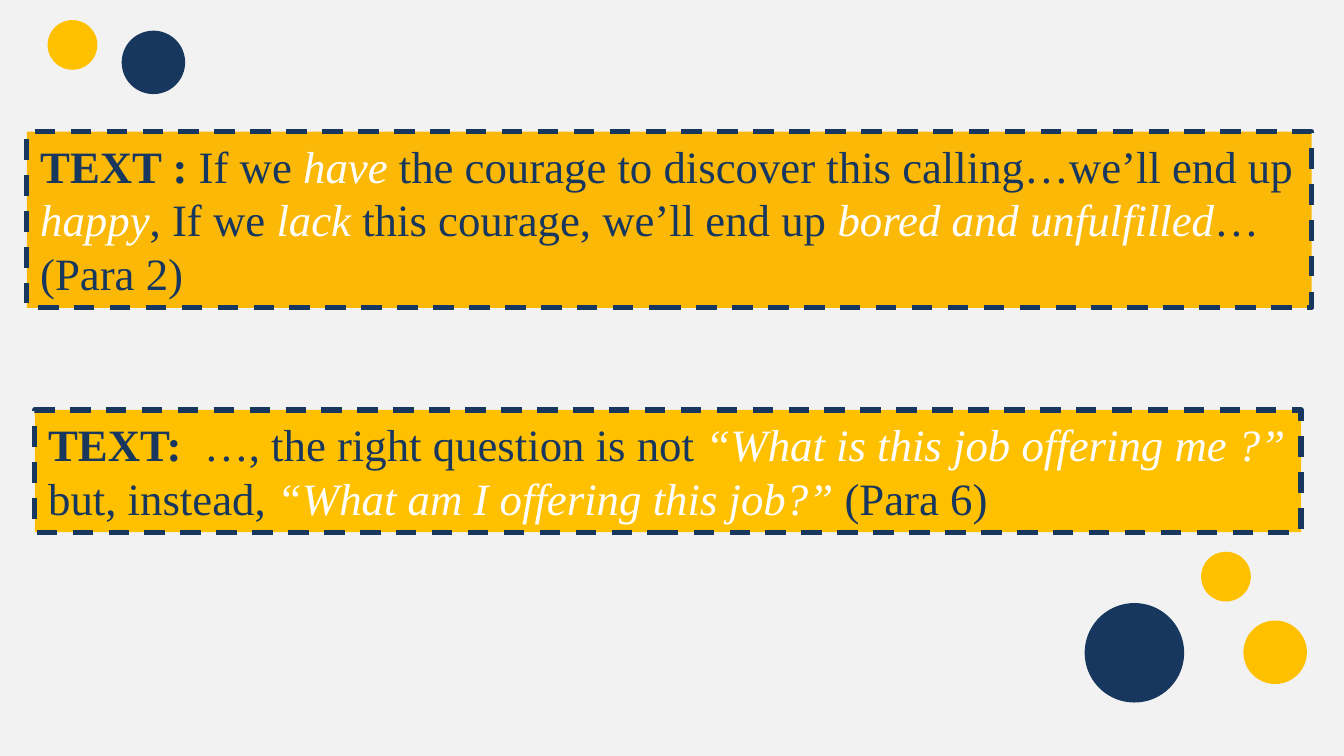
"""Build a slide with two quoted passages and decorative dots."""
from typing import NamedTuple

import pptx
import pptx.dml.color
import pptx.enum.dml
import pptx.enum.shapes
import pptx.enum.text
import pptx.slide
import pptx.util

NAVY = pptx.dml.color.RGBColor(0x17, 0x37, 0x5E)
GOLD = pptx.dml.color.RGBColor(0xFF, 0xC0, 0x00)
AMBER = pptx.dml.color.RGBColor(0xFC, 0xB8, 0x06)
WHITE = pptx.dml.color.RGBColor(0xFF, 0xFF, 0xFF)
PALE_GREY = pptx.dml.color.RGBColor(0xF2, 0xF2, 0xF2)

BASE_FONT = {"name": "Times New Roman", "size": pptx.util.Pt(24)}
LABEL = {"bold": True, "italic": False}
PLAIN = {"bold": False, "italic": False}
QUOTED = {"bold": False, "italic": True}
BORDER = {
    "width": pptx.util.Pt(2.75),
    "dash_style": pptx.enum.dml.MSO_LINE_DASH_STYLE.DASH,
}
FRAME = {
    "word_wrap": True,
    "auto_size": pptx.enum.text.MSO_AUTO_SIZE.SHAPE_TO_FIT_TEXT,
}


class Passage(NamedTuple):
    left: float
    top: float
    width: float
    height: float
    color: pptx.dml.color.RGBColor
    phrases: list[tuple[str, dict]]


class Dot(NamedTuple):
    left: float
    top: float
    diameter: float
    color: pptx.dml.color.RGBColor


PASSAGES = [
    Passage(0.66, 7.75, 23.93, 2.31, GOLD, [
        ("TEXT: ", LABEL),
        (" …, the right question is not ", PLAIN),
        ("“What is this job offering me ?” ", QUOTED),
        ("but, instead, ", PLAIN),
        ("“What am I offering this job?” ", QUOTED),
        ("(Para 6)", PLAIN),
    ]),
    Passage(0.51, 2.49, 24.28, 3.33, AMBER, [
        ("TEXT : ", LABEL),
        ("If we ", PLAIN),
        ("have", QUOTED),
        (" the courage to discover this calling…we’ll end up ", PLAIN),
        ("happy", QUOTED),
        (", If we ", PLAIN),
        ("lack", QUOTED),
        (" this courage, we’ll end up ", PLAIN),
        ("bored and unfulfilled", QUOTED),
        ("… (Para 2)", PLAIN),
    ]),
]

SMALL, MEDIUM, LARGE = 0.94, 1.2, 1.88
DOTS = [
    Dot(23.5, 11.73, MEDIUM, GOLD),
    Dot(20.5, 11.4, LARGE, NAVY),
    Dot(22.7, 10.43, SMALL, GOLD),
    Dot(0.9, 0.38, SMALL, GOLD),
    Dot(2.3, 0.58, MEDIUM, NAVY),
]


def apply_format(target: object, values: dict) -> None:
    """Set every named format value on the target."""
    for attribute, value in values.items():
        setattr(target, attribute, value)


def draw_passage(slide: pptx.slide.Slide, passage: Passage) -> None:
    """Draw a dashed box holding one passage of mixed emphasis."""
    box = slide.shapes.add_textbox(*map(pptx.util.Cm, passage[:4]))
    box.fill.solid()
    box.fill.fore_color.rgb = passage.color
    box.line.color.rgb = NAVY
    apply_format(box.line, BORDER)
    apply_format(box.text_frame, FRAME)
    paragraph = box.text_frame.paragraphs[0]
    for words, emphasis in passage.phrases:
        phrase = paragraph.add_run()
        phrase.text = words
        apply_format(phrase.font, BASE_FONT | emphasis)
        phrase.font.color.rgb = WHITE if emphasis["italic"] else NAVY


def draw_dot(slide: pptx.slide.Slide, dot: Dot) -> None:
    """Draw one plain filled circle."""
    left, top, diameter = map(pptx.util.Cm, dot[:3])
    circle = slide.shapes.add_shape(
        pptx.enum.shapes.MSO_SHAPE.OVAL, left, top, diameter, diameter)
    circle.shadow.inherit = False
    circle.fill.solid()
    circle.fill.fore_color.rgb = dot.color
    circle.line.fill.background()


def main() -> None:
    """Build and save the presentation."""
    deck = pptx.Presentation()
    deck.slide_width = pptx.util.Cm(25.4)
    deck.slide_height = pptx.util.Cm(14.29)
    slide = deck.slides.add_slide(deck.slide_layouts[6])
    slide.background.fill.solid()
    slide.background.fill.fore_color.rgb = PALE_GREY
    for passage in PASSAGES:
        draw_passage(slide, passage)
    for dot in DOTS:
        draw_dot(slide, dot)
    deck.save("out.pptx")


if __name__ == "__main__":
    main()
